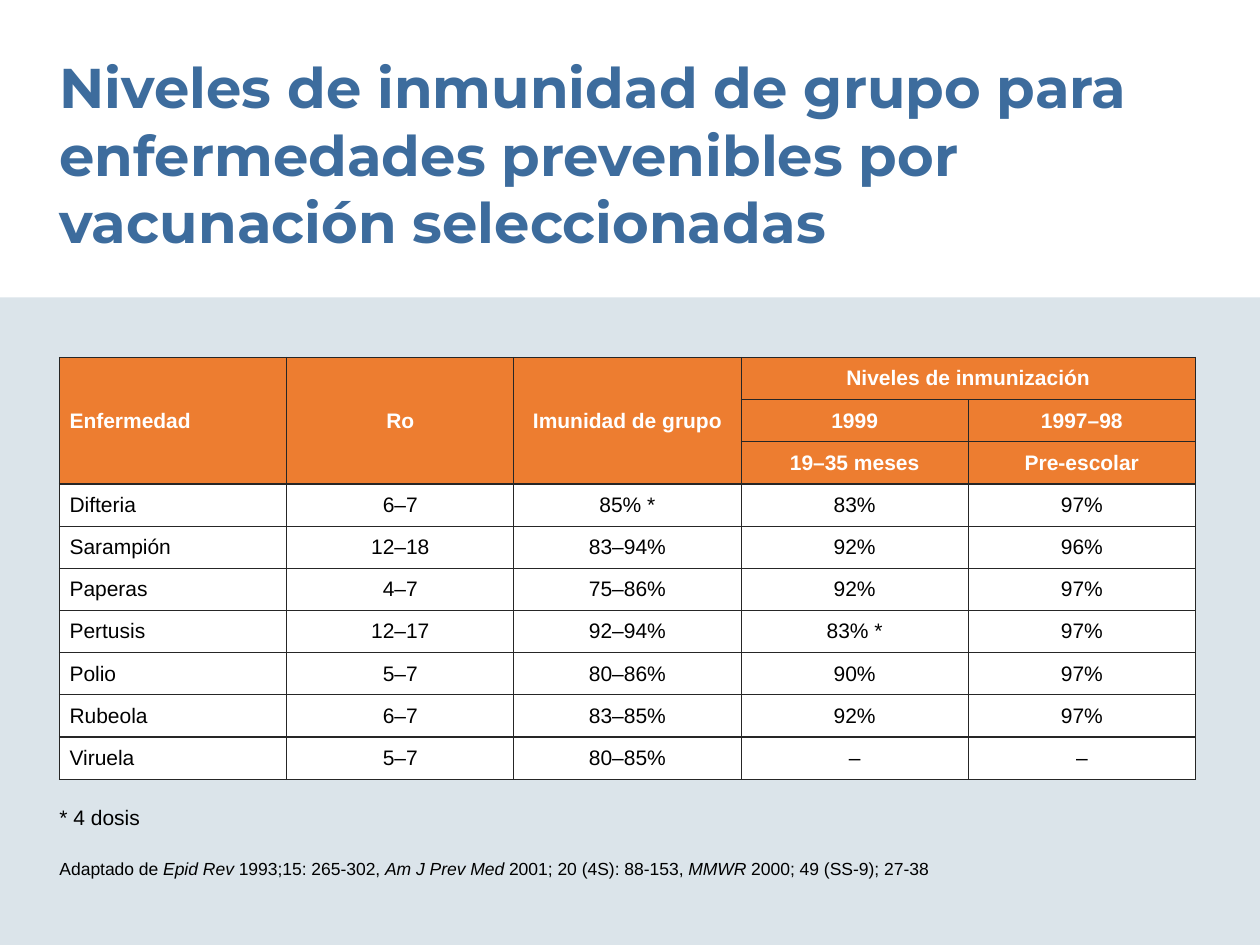
from lxml.etree import SubElement
from pptx import Presentation
from pptx.dml.color import RGBColor
from pptx.enum.shapes import MSO_SHAPE
from pptx.enum.text import MSO_ANCHOR, MSO_AUTO_SIZE, PP_ALIGN
from pptx.oxml.ns import qn
from pptx.util import Pt

COLORS = {
    "panel": "DBE4EA",
    "title": "3D6C9D",
    "header": "ED7D30",
    "border": "262626",
    "white": "FFFFFF",
    "black": "000000",
}
TITLE = {"name": "Montserrat", "size": Pt(32), "bold": True}
HEADER = {"name": "Arial", "size": Pt(12), "bold": True}
BODY = {"name": "Arial", "size": Pt(12), "bold": False}
SOURCE = {"name": "Arial", "size": Pt(10), "bold": False}
CELL = {
    "margin_left": Pt(5.76),
    "margin_right": Pt(5.76),
    "margin_top": Pt(3.6),
    "margin_bottom": Pt(3.6),
    "vertical_anchor": MSO_ANCHOR.MIDDLE,
}
FRAME = {
    "margin_left": 0,
    "margin_right": 0,
    "margin_top": 0,
    "margin_bottom": 0,
    "word_wrap": True,
    "auto_size": MSO_AUTO_SIZE.SHAPE_TO_FIT_TEXT,
}

HEADER_ROWS = [
    ["Enfermedad", "Ro", "Imunidad de grupo", "Niveles de inmunización", ""],
    ["", "", "", "1999", "1997–98"],
    ["", "", "", "19–35 meses", "Pre-escolar"],
]
DISEASE_ROWS = [
    ["Difteria", "6–7", "85% *", "83%", "97%"],
    ["Sarampión", "12–18", "83–94%", "92%", "96%"],
    ["Paperas", "4–7", "75–86%", "92%", "97%"],
    ["Pertusis", "12–17", "92–94%", "83% *", "97%"],
    ["Polio", "5–7", "80–86%", "90%", "97%"],
    ["Rubeola", "6–7", "83–85%", "92%", "97%"],
    ["Viruela", "5–7", "80–85%", "–", "–"],
]
MERGES = [((0, 0), (2, 0)), ((0, 1), (2, 1)), ((0, 2), (2, 2)), ((0, 3), (0, 4))]


def rgb(name):
    return RGBColor.from_string(COLORS[name])


def set_attrs(obj, values):
    for name, value in values.items():
        setattr(obj, name, value)


def add_run(p, text, font, color, italic=False):
    r = p.add_run()
    r.text = text
    set_attrs(r.font, {**font, "italic": italic})
    r.font.color.rgb = rgb(color)


def add_text(s, box, runs, font, color):
    tf = s.shapes.add_textbox(*map(Pt, box)).text_frame
    set_attrs(tf, FRAME)
    for text, italic in runs:
        add_run(tf.paragraphs[0], text, font, color, italic)


def add_panel(s, box):
    sp = s.shapes.add_shape(MSO_SHAPE.RECTANGLE, *map(Pt, box))
    sp.shadow.inherit = False
    sp.fill.solid()
    sp.fill.fore_color.rgb = rgb("panel")
    sp.line.fill.background()


def set_borders(cell):
    tc_pr = cell._tc.get_or_add_tcPr()
    for i, side in enumerate(("lnL", "lnR", "lnT", "lnB")):
        ln = SubElement(tc_pr, qn(f"a:{side}"), w=str(Pt(0.75)))
        fill = SubElement(ln, qn("a:solidFill"))
        SubElement(fill, qn("a:srgbClr"), val=COLORS["border"])
        tc_pr.remove(ln)
        tc_pr.insert(i, ln)


def add_immunity_table(s, box):
    rows = HEADER_ROWS + DISEASE_ROWS
    n_cols = len(rows[0])
    table = s.shapes.add_table(len(rows), n_cols, *map(Pt, box)).table
    for col in table.columns:
        col.width = Pt(box[2] / n_cols)
    for row in table.rows:
        row.height = Pt(box[3] / len(rows))
    for start, end in MERGES:
        table.cell(*start).merge(table.cell(*end))
    for i, texts in enumerate(rows):
        is_header = i < len(HEADER_ROWS)
        for j, text in enumerate(texts):
            cell = table.cell(i, j)
            set_attrs(cell, CELL)
            cell.fill.solid()
            cell.fill.fore_color.rgb = rgb("header" if is_header else "white")
            set_borders(cell)
            if text:
                p = cell.text_frame.paragraphs[0]
                p.alignment = PP_ALIGN.CENTER if j else PP_ALIGN.LEFT
                add_run(p, text, HEADER if is_header else BODY,
                        "white" if is_header else "black")


def add_footnotes(s, box):
    x, y, w, h = box
    add_text(s, (x, y + 30.4, w, 12), [
        ("Adaptado de ", False),
        ("Epid Rev ", True),
        ("1993;15: 265-302, ", False),
        ("Am J Prev Med ", True),
        ("2001; 20 (4S): 88-153, ", False),
        ("MMWR", True),
        (" 2000; 49 (SS-9); 27-38", False),
    ], SOURCE, "black")
    add_text(s, (x, y, 218, 14), [("* 4 dosis", False)], BODY, "black")


def main():
    prs = Presentation()
    set_attrs(prs, {"slide_width": Pt(720), "slide_height": Pt(540)})
    s = prs.slides.add_slide(prs.slide_layouts[6])
    add_panel(s, (0, 170, 720, 370))
    add_text(s, (34, 30.2, 615.6, 116.6), [
        ("Niveles de inmunidad de grupo para enfermedades prevenibles "
         "por vacunación seleccionadas", False),
    ], TITLE, "title")
    add_immunity_table(s, (34, 204.3, 649.2, 241))
    add_footnotes(s, (34, 460, 625, 42.4))
    prs.save("out.pptx")


if __name__ == "__main__":
    main()
